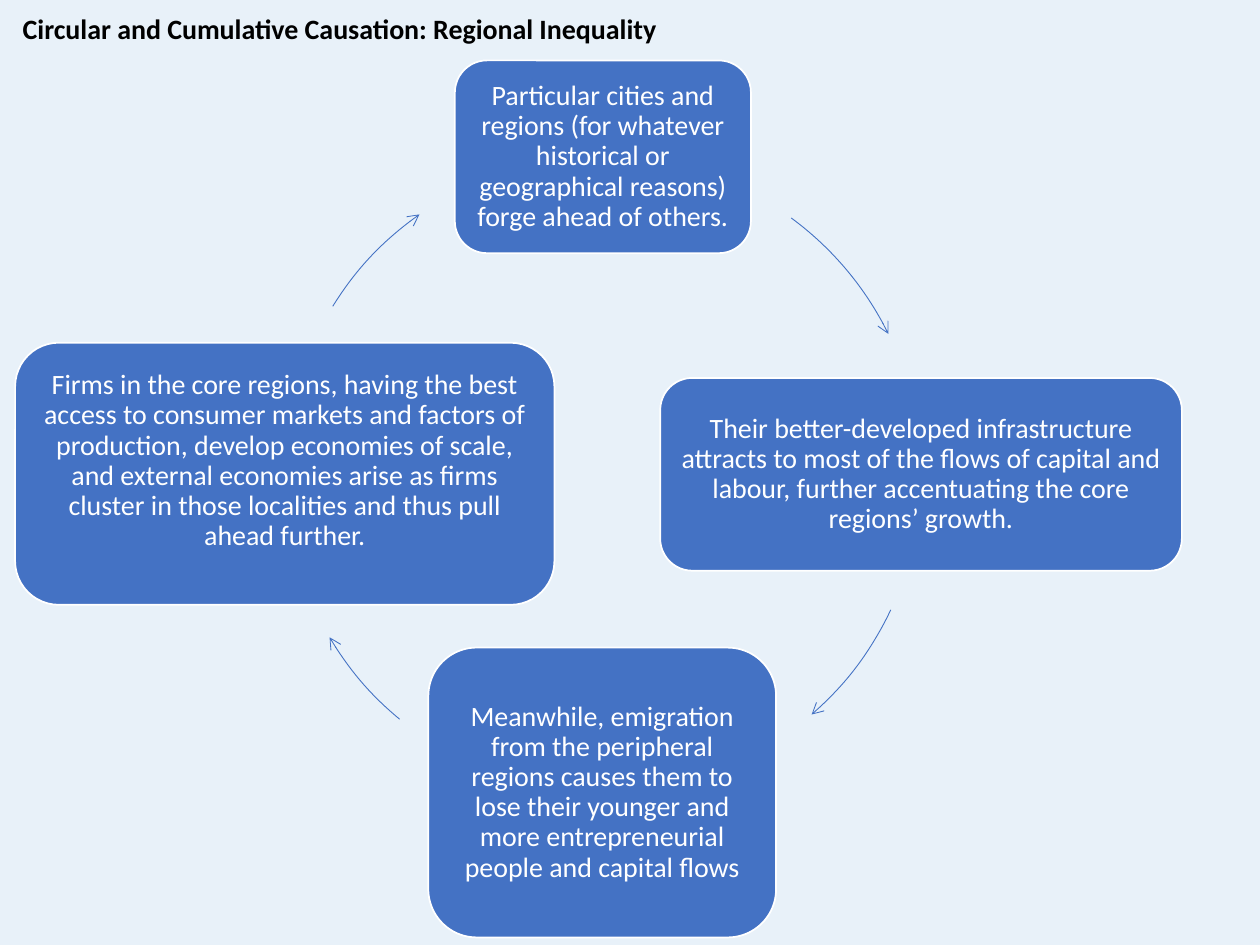
"""Build the slide on circular and cumulative causation in regional inequality."""
from dataclasses import dataclass

import pptx
import pptx.dml.color
import pptx.enum.shapes
import pptx.enum.text
import pptx.oxml
import pptx.oxml.ns
import pptx.util

Inches = pptx.util.Inches
Pt = pptx.util.Pt
RGB = pptx.dml.color.RGBColor.from_string
SHAPE = pptx.enum.shapes.MSO_SHAPE
ALIGN = pptx.enum.text.PP_ALIGN
MIDDLE = pptx.enum.text.MSO_ANCHOR.MIDDLE


@dataclass(frozen=True)
class Theme:
    """Colours, font and sizes of the slide."""
    background: str = "E8F1F9"
    accent: str = "4472C4"
    light: str = "FFFFFF"
    dark: str = "000000"
    font: str = "Calibri"
    size: float = 16
    spacing: float = 0.9
    outline: float = 1
    arrow: float = 0.5
    inset: float = 0.07


THEME = Theme()
TITLE = "Circular and Cumulative Causation: Regional Inequality"
CYCLE_BOX = (2.26, 1.24, 5.05, 5.05)
ARROW_ANGLES = [(306.3, 333.8), (25.2, 49), (129.7, 149.2), (211.9, 234.8)]
STAGES = [
    ((3.61, 0.48, 2.35, 1.53), 0,
     "Particular cities and regions (for whatever historical or geographical "
     "reasons) forge ahead of others."),
    ((5.24, 3, 4.14, 1.53), 0,
     "Their better-developed infrastructure attracts to most of the flows of "
     "capital and labour, further accentuating the core regions’ growth."),
    ((3.4, 5.14, 2.76, 2.3), 0,
     "Meanwhile, emigration from the peripheral regions causes them to lose "
     "their younger and more entrepreneurial people and capital flows"),
    ((0.12, 2.72, 4.28, 2.08), 0.2,
     "Firms in the core regions, having the best access to consumer markets "
     "and factors of production, develop economies of scale, and external "
     "economies arise as firms cluster in those localities and thus pull "
     "ahead further."),
]


def write_text(tf, text, color, align, bold=False):
    """Fill a text frame with one formatted paragraph."""
    tf.word_wrap = True
    tf.vertical_anchor = MIDDLE
    p = tf.paragraphs[0]
    p.text = text
    p.alignment = align
    p.line_spacing = THEME.spacing
    p.font.name = THEME.font
    p.font.size = Pt(THEME.size)
    p.font.bold = bold
    p.font.color.rgb = RGB(color)


def add_title(slide, text):
    """Place and format the title placeholder."""
    sp = slide.shapes.title
    sp.left, sp.top = Inches(0.08), Inches(0.03)
    sp.width, sp.height = Inches(8.62), Inches(0.43)
    write_text(sp.text_frame, text, THEME.dark, ALIGN.LEFT, bold=True)


def add_stage(slide, box, raise_by, text):
    """Add a rounded stage box, with extra bottom inset to raise its text."""
    sp = slide.shapes.add_shape(SHAPE.ROUNDED_RECTANGLE, *map(Inches, box))
    sp.shadow.inherit = False
    sp.fill.solid()
    sp.fill.fore_color.rgb = RGB(THEME.accent)
    sp.line.color.rgb = RGB(THEME.light)
    sp.line.width = Pt(THEME.outline)
    tf = sp.text_frame
    tf.margin_left = tf.margin_right = tf.margin_top = Inches(THEME.inset)
    tf.margin_bottom = Inches(THEME.inset + raise_by)
    write_text(tf, text, THEME.light, ALIGN.CENTER)


def add_cycle_arrow(slide, start, end):
    """Add an arrow along the cycle between two clockwise angles in degrees."""
    sp = slide.shapes.add_shape(SHAPE.ARC, *map(Inches, CYCLE_BOX))
    sp.shadow.inherit = False
    sp.fill.background()
    sp.line.color.rgb = RGB(THEME.accent)
    sp.line.width = Pt(THEME.arrow)
    for i, angle in enumerate((start, end)):
        sp.adjustments[i] = angle * 0.6
    ln = sp.line._get_or_add_ln()
    ln.append(pptx.oxml.parse_xml(
        f'<a:tailEnd {pptx.oxml.ns.nsdecls("a")} type="arrow"/>'))


def main():
    """Build and save the slide."""
    prs = pptx.Presentation()
    prs.slide_width, prs.slide_height = Inches(10), Inches(7.5)
    slide = prs.slides.add_slide(prs.slide_layouts[5])
    slide.background.fill.solid()
    slide.background.fill.fore_color.rgb = RGB(THEME.background)
    add_title(slide, TITLE)
    for stage, angles in zip(STAGES, ARROW_ANGLES):
        add_stage(slide, *stage)
        add_cycle_arrow(slide, *angles)
    prs.save("out.pptx")


if __name__ == "__main__":
    main()
